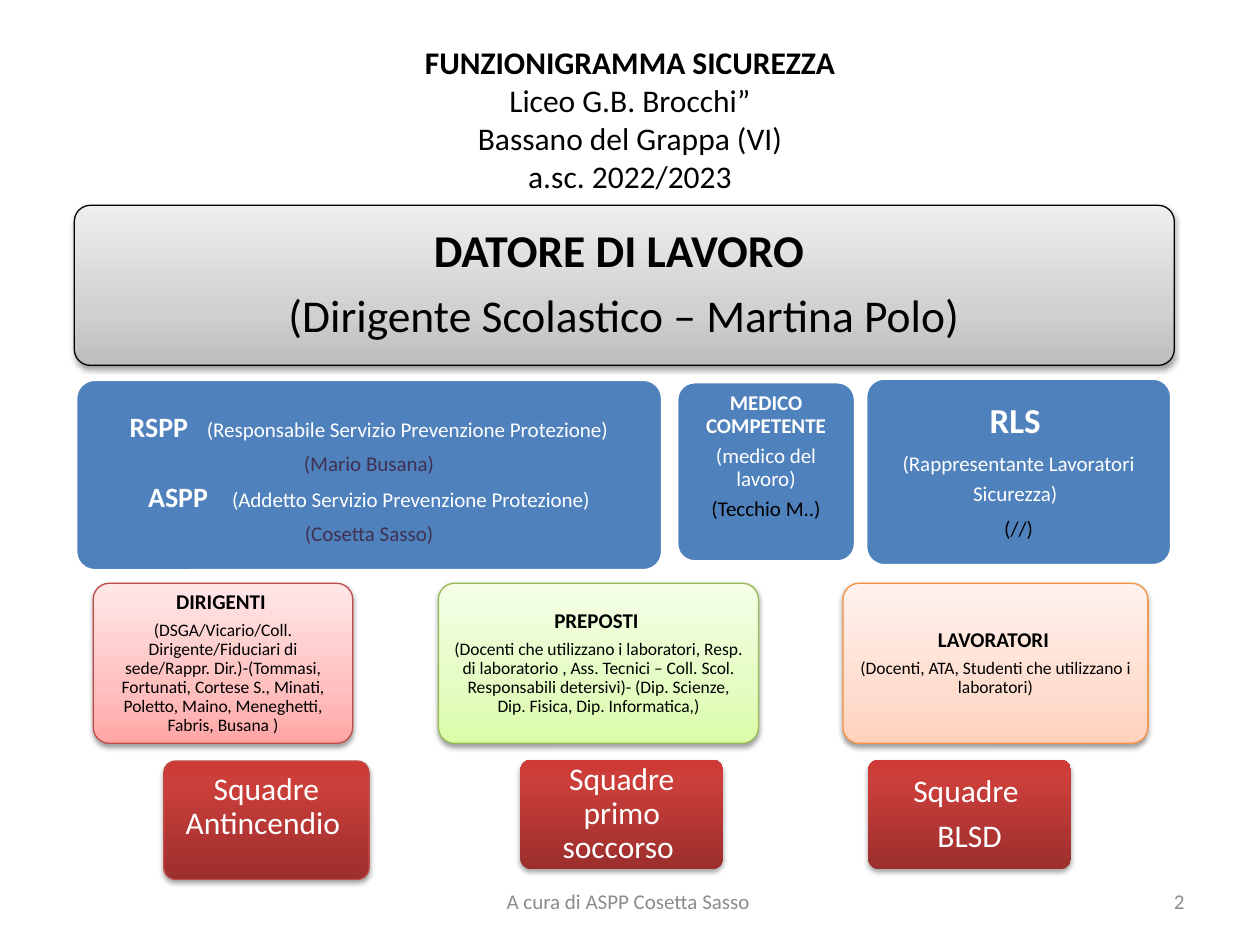
from lxml import etree
from pptx import Presentation
from pptx.dml.color import RGBColor
from pptx.enum.shapes import MSO_SHAPE
from pptx.enum.text import MSO_ANCHOR, PP_ALIGN
from pptx.oxml.ns import qn
from pptx.util import Inches, Pt

ROUNDED = MSO_SHAPE.ROUNDED_RECTANGLE
MIDDLE = MSO_ANCHOR.MIDDLE
CENTER, RIGHT = PP_ALIGN.CENTER, PP_ALIGN.RIGHT
FONT = "Calibri"
COLUMNS, ROWS = 100, 75
WIDTH, HEIGHT = Inches(10), Inches(7.5)
COLORS = {
    "black": "000000", "white": "FFFFFF", "blue": "4F81BD", "plum": "403152",
    "footer": "8C8C8C", "red": "BF4C48", "green": "98B955", "orange": "F69240",
}
GRADIENTS = {
    "gray": ((0, "BDBDBD"), (35, "D1D1D1"), (100, "EEEEEE")),
    "rose": ((0, "FFA6A5"), (35, "FFC0BF"), (100, "FFE7E7")),
    "lime": ((0, "DAFDA7"), (35, "E4FCC2"), (100, "F5FFE7")),
    "peach": ((0, "FFD2BD"), (35, "FFDED0"), (100, "FFF2ED")),
    "brick": ((0, "9C2F2D"), (80, "CB3E3A"), (100, "CE3B37")),
}


def on_grid(box):
    """Turn left, top, width and height in grid cells into slide lengths."""
    left, top, width, height = box
    return (int(WIDTH * left / COLUMNS), int(HEIGHT * top / ROWS),
            int(WIDTH * width / COLUMNS), int(HEIGHT * height / ROWS))


def within(region, box):
    """Shift a box by the corner of its region."""
    return region[0] + box[0], region[1] + box[1], box[2], box[3]


def rgb(name):
    """Look up a named colour."""
    return RGBColor.from_string(COLORS[name])


def add_run(paragraph, text, size, color="black", bold=False, tracking=0):
    """Add one formatted run, with optional letter spacing in points."""
    run = paragraph.add_run()
    run.text = text
    font = run.font
    font.name, font.size, font.bold = FONT, Pt(size), bold
    font.color.rgb = rgb(color)
    if tracking:
        run.font._element.set("spc", str(tracking * 100))


def write_lines(frame, lines):
    """Write centred lines whose spacing follows their largest run."""
    for index, runs in enumerate(lines):
        paragraph = frame.add_paragraph() if index else frame.paragraphs[0]
        paragraph.alignment = CENTER
        paragraph.line_spacing = 0.9
        paragraph.space_after = Pt(round(0.35 * max(run[1] for run in runs), 1))
        for run in runs:
            add_run(paragraph, *run)


def paint_gradient(shape, stops):
    """Fill a shape with a vertical gradient that starts at the bottom."""
    shape.fill.gradient()
    shape.fill.gradient_angle = 90
    stop_list = shape.element.spPr.find(qn("a:gradFill")).find(qn("a:gsLst"))
    for stop in list(stop_list):
        stop_list.remove(stop)
    for position, color in stops:
        stop = etree.SubElement(stop_list, qn("a:gs"), pos=str(position * 1000))
        etree.SubElement(stop, qn("a:srgbClr"), val=color)


def cast_shadow(shape, opacity, distance):
    """Give a shape a soft shadow below it."""
    effects = shape.element.spPr.find(qn("a:effectLst"))
    shadow = etree.SubElement(
        effects, qn("a:outerShdw"), blurRad=str(Pt(3.1)), dist=str(Pt(distance)),
        dir="5400000", rotWithShape="0")
    color = etree.SubElement(shadow, qn("a:srgbClr"), val=COLORS["black"])
    etree.SubElement(color, qn("a:alpha"), val=str(opacity * 1000))


def add_card(slide, box, lines, fill, line=None, inset=0.1, extra_top=0,
             extra_bottom=0, shadow=(38, 1.6)):
    """Add a rounded card with its text."""
    card = slide.shapes.add_shape(ROUNDED, *on_grid(box))
    card.adjustments[0] = 0.1
    card.shadow.inherit = False
    if fill in GRADIENTS:
        paint_gradient(card, GRADIENTS[fill])
        cast_shadow(card, *shadow)
    else:
        card.fill.solid()
        card.fill.fore_color.rgb = rgb(fill)
    if line:
        card.line.color.rgb = rgb(line)
        card.line.width = Pt(2 if line == "white" else 0.75)
    else:
        card.line.fill.background()
    frame = card.text_frame
    frame.word_wrap = True
    frame.vertical_anchor = MIDDLE
    frame.margin_left = frame.margin_right = Inches(inset)
    frame.margin_top = Inches(inset + extra_top)
    frame.margin_bottom = Inches(inset + extra_bottom)
    write_lines(frame, lines)


def add_heading(slide, box):
    """Place the title and the school lines below it."""
    title = slide.shapes.title
    title.left, title.top, title.width, title.height = on_grid(box)
    frame = title.text_frame
    frame.vertical_anchor = MIDDLE
    paragraph = frame.paragraphs[0]
    paragraph.alignment = CENTER
    add_run(paragraph, "FUNZIONIGRAMMA SICUREZZA", 18, "black", True)
    for text in ("Liceo G.B. Brocchi”", "Bassano del Grappa (VI)", "a.sc. 2022/2023"):
        paragraph.add_line_break()
        add_run(paragraph, text, 18)


def add_employer(slide, box):
    """Place the employer band."""
    add_card(slide, box, [
        [("DATORE DI LAVORO ", 26, "black", True)],
        [("(Dirigente Scolastico – Martina Polo)", 26)],
    ], "gray", "black", inset=0.14)


def add_services(slide, region):
    """Place the prevention service, doctor and workers' delegate cards."""
    service = []
    for role, gap, duty, person in (
            ("RSPP", 8, "(Responsabile Servizio Prevenzione Protezione)", "(Mario Busana)"),
            ("ASPP", 11, "(Addetto Servizio Prevenzione Protezione)", "(Cosetta Sasso)")):
        service += [[(role, 16, "white", True), (" ", 12, "white", True, gap),
                     (duty, 12, "white")], [(person, 12, "plum")]]
    doctor = [[("MEDICO COMPETENTE", 12, "white", True)],
              [("(medico del lavoro)", 12, "white")], [("(Tecchio M..)", 12)]]
    delegate = [[("RLS", 20, "white", True), (" ", 17, "white")],
                [("(Rappresentante Lavoratori Sicurezza)", 12, "white"), (" ", 17, "white")],
                [("(//)", 12)]]
    for box, lines, inset, top, bottom in (
            ((0, 0.1, 46.6, 15.2), service, 0.12, 0.08, 0),
            ((47.7, 0.3, 14.2, 14.3), doctor, 0.09, 0, 0.24),
            ((62.7, 0, 24.3, 14.9), delegate, 0.12, 0, 0)):
        add_card(slide, within(region, box), lines, "blue", "white", inset, top, bottom)


def add_roles(slide, region):
    """Place the managers, supervisors and workers cards."""
    for left, width, fill, line, role, members in (
            (0, 20.6, "rose", "red", "DIRIGENTI",
             "(DSGA/Vicario/Coll. Dirigente/Fiduciari di sede/Rappr. Dir.)-(Tommasi, "
             "Fortunati, Cortese S., Minati, Poletto, Maino, Meneghetti, Fabris, Busana )"),
            (27.4, 25.4, "lime", "green", "PREPOSTI",
             "(Docenti che utilizzano i laboratori, Resp. di laboratorio , Ass. Tecnici – "
             "Coll. Scol. Responsabili detersivi)- (Dip. Scienze, Dip. Fisica, "
             "Dip. Informatica,)"),
            (59.5, 24.2, "peach", "orange", "LAVORATORI",
             "(Docenti, ATA, Studenti che utilizzano i laboratori)")):
        lines = [[(role, 12, "black", True), (" ", 10)], [(members, 10)]]
        add_card(slide, within(region, (left, 0, width, region[3])), lines, fill, line, 0.09)


def add_squads(slide, region):
    """Place the emergency squad cards."""
    tail = (" ", 18, "white", False, 4)
    for box, line, bottom, lines in (
            ((0, 0.1, 16.3, 9.4), "red", 0.2, [[("Squadre Antincendio", 18, "white"), tail]]),
            ((28.3, 0, 16.1, 8.7), None, 0, [[("Squadre primo soccorso", 18, "white"), tail]]),
            ((55.9, 0, 16.1, 8.7), None, 0,
             [[("Squadre ", 18, "white")], [("BLSD", 18, "white")]])):
        add_card(slide, within(region, box), lines, "brick", line,
                 extra_bottom=bottom, shadow=(35, 1.8))


def add_footer(slide, region):
    """Place the credit line and the page number."""
    for left, width, text, alignment in (
            (0, 31.7, "A cura di ASPP Cosetta Sasso ", CENTER), (37.5, 23.3, "2", RIGHT)):
        note = slide.shapes.add_textbox(*on_grid(within(region, (left, 0, width, region[3]))))
        frame = note.text_frame
        frame.word_wrap = True
        frame.vertical_anchor = MIDDLE
        frame.paragraphs[0].alignment = alignment
        add_run(frame.paragraphs[0], text, 12, "footer")


def main():
    """Build the safety chart slide and save it."""
    deck = Presentation()
    deck.slide_width, deck.slide_height = WIDTH, HEIGHT
    slide = deck.slides.add_slide(deck.slide_layouts.get_by_name("Title Only"))
    add_heading(slide, (7.5, 2.9, 85, 13.1))
    add_employer(slide, (5.9, 16.3, 87.3, 12.7))
    add_services(slide, (6, 30, 87, 15.3))
    add_roles(slide, (7.4, 46.3, 83.7, 12.7))
    add_squads(slide, (13, 60.3, 72, 9.5))
    add_footer(slide, (34.2, 69.5, 60.8, 4))
    deck.save("out.pptx")


if __name__ == "__main__":
    main()
